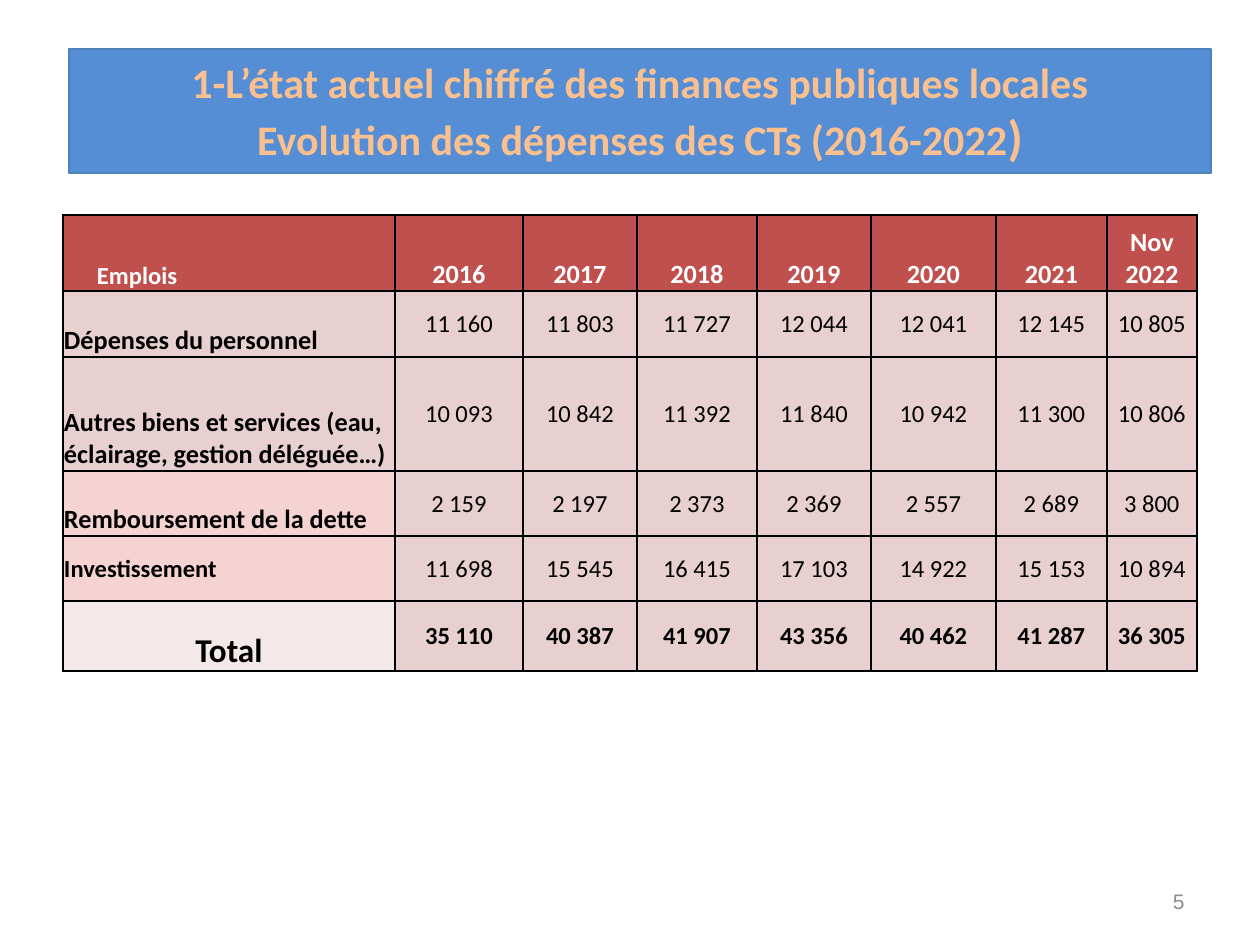
from dataclasses import dataclass

from lxml.etree import SubElement
from pptx import Presentation
from pptx.dml.color import RGBColor
from pptx.enum.shapes import MSO_SHAPE
from pptx.enum.text import MSO_ANCHOR, PP_ALIGN
from pptx.oxml.ns import qn
from pptx.util import Emu, Pt


@dataclass(frozen=True)
class Theme:
    font: str = "Calibri"
    number_font: str = "Arial"
    banner: str = "558ED5"
    banner_line: str = "4F81BD"
    banner_text: str = "FAC090"
    header: str = "C0504D"
    body: str = "E8D0D0"
    accent: str = "F5D3D3"
    total: str = "F4E9E9"
    white: str = "FFFFFF"
    black: str = "000000"
    grey: str = "8C8C8C"
    title_size: int = 24
    bracket_size: int = 28
    total_size: int = 19
    label_size: int = 15
    value_size: int = 14
    page_size: int = 12


@dataclass(frozen=True)
class Box:
    left: int
    top: int
    width: int
    height: int


@dataclass(frozen=True)
class Style:
    size: int
    color: str
    bold: bool = False
    font: str = "Calibri"


@dataclass(frozen=True)
class CellLook:
    style: Style
    fill: str
    anchor: MSO_ANCHOR = MSO_ANCHOR.MIDDLE
    align: PP_ALIGN = PP_ALIGN.CENTER
    indent: int = 1


@dataclass(frozen=True)
class TableRow:
    height: int
    label: str
    label_look: CellLook
    values: tuple[str, ...]
    value_look: CellLook


THEME = Theme()
EMU_PER_PIXEL = 914400 / 126
BOTTOM, MIDDLE = MSO_ANCHOR.BOTTOM, MSO_ANCHOR.MIDDLE
LEFT, CENTER = PP_ALIGN.LEFT, PP_ALIGN.CENTER

TITLE_BOX = Box(69, 49, 1142, 124)
TABLE_BOX = Box(63, 215, 1134, 456)
PAGE_BOX = Box(903, 876, 294, 50)
COLUMN_WIDTHS = (332, 128, 114, 120, 114, 125, 111, 90)

HEADING = CellLook(Style(THEME.label_size, THEME.white, True), THEME.header, BOTTOM)
HEADING_LABEL = CellLook(
    Style(THEME.value_size, THEME.white, True), THEME.header, BOTTOM, LEFT, 34
)
VALUE = CellLook(Style(THEME.value_size, THEME.black), THEME.body)
TOTAL_VALUE = CellLook(Style(THEME.value_size, THEME.black, True), THEME.body)
LABEL_STYLE = Style(THEME.label_size, THEME.black, True)
LABEL = CellLook(LABEL_STYLE, THEME.body, BOTTOM, LEFT)
DEBT_LABEL = CellLook(LABEL_STYLE, THEME.accent, BOTTOM, LEFT)
INVESTMENT_LABEL = CellLook(
    Style(THEME.value_size, THEME.black, True), THEME.accent, MIDDLE, LEFT
)
TOTAL_LABEL = CellLook(Style(THEME.total_size, THEME.black, True), THEME.total, BOTTOM)

ROWS = (
    TableRow(76, "Emplois", HEADING_LABEL,
             ("2016", "2017", "2018", "2019", "2020", "2021", "Nov 2022"), HEADING),
    TableRow(66, "Dépenses du personnel", LABEL,
             ("11 160", "11 803", "11 727", "12 044", "12 041", "12 145", "10 805"), VALUE),
    TableRow(114, "Autres biens et services (eau, éclairage, gestion déléguée…)", LABEL,
             ("10 093", "10 842", "11 392", "11 840", "10 942", "11 300", "10 806"), VALUE),
    TableRow(65, "Remboursement de la dette", DEBT_LABEL,
             ("2 159", "2 197", "2 373", "2 369", "2 557", "2 689", "3 800"), VALUE),
    TableRow(65, "Investissement", INVESTMENT_LABEL,
             ("11 698", "15 545", "16 415", "17 103", "14 922", "15 153", "10 894"), VALUE),
    TableRow(70, "Total", TOTAL_LABEL,
             ("35 110", "40 387", "41 907", "43 356", "40 462", "41 287", "36 305"), TOTAL_VALUE),
)


def px(length: int) -> Emu:
    return Emu(round(length * EMU_PER_PIXEL))


def frame_of(box: Box) -> tuple[Emu, Emu, Emu, Emu]:
    return px(box.left), px(box.top), px(box.width), px(box.height)


def color_of(code: str) -> RGBColor:
    return RGBColor.from_string(code)


def add_span(para, text: str, style: Style) -> None:
    span = para.add_run()
    span.text = text
    span.font.name = style.font
    span.font.size = Pt(style.size)
    span.font.bold = style.bold
    span.font.color.rgb = color_of(style.color)


def add_title(page) -> None:
    banner = page.shapes.add_shape(MSO_SHAPE.RECTANGLE, *frame_of(TITLE_BOX))
    banner.shadow.inherit = False
    banner.fill.solid()
    banner.fill.fore_color.rgb = color_of(THEME.banner)
    banner.line.color.rgb = color_of(THEME.banner_line)
    banner.line.width = Pt(0.75)
    banner.text_frame.word_wrap = True
    banner.text_frame.vertical_anchor = MIDDLE
    para = banner.text_frame.paragraphs[0]
    para.alignment = CENTER
    style = Style(THEME.title_size, THEME.banner_text, True)
    add_span(para, "1-L’état actuel chiffré des finances publiques locales", style)
    para.add_line_break()
    add_span(para, "Evolution des dépenses des CTs (2016-2022", style)
    add_span(para, ")", Style(THEME.bracket_size, THEME.banner_text, True))


def add_borders(cell) -> None:
    properties = cell._tc.get_or_add_tcPr()
    for position, side in enumerate(("a:lnL", "a:lnR", "a:lnT", "a:lnB")):
        line = SubElement(properties, qn(side), w=str(Pt(1)))
        fill = SubElement(line, qn("a:solidFill"))
        SubElement(fill, qn("a:srgbClr"), val=THEME.black)
        properties.insert(position, line)


def fill_cell(cell, text: str, look: CellLook) -> None:
    cell.fill.solid()
    cell.fill.fore_color.rgb = color_of(look.fill)
    cell.vertical_anchor = look.anchor
    cell.margin_left = px(look.indent)
    cell.margin_right = cell.margin_top = px(1)
    cell.margin_bottom = 0
    para = cell.text_frame.paragraphs[0]
    para.alignment = look.align
    add_span(para, text, look.style)
    add_borders(cell)


def add_spending_table(page) -> None:
    table = page.shapes.add_table(
        len(ROWS), len(COLUMN_WIDTHS), *frame_of(TABLE_BOX)
    ).table
    table.horz_banding = False
    for column, width in zip(table.columns, COLUMN_WIDTHS):
        column.width = px(width)
    for table_row, row in zip(table.rows, ROWS):
        table_row.height = px(row.height)
        label_cell, *value_cells = table_row.cells
        fill_cell(label_cell, row.label, row.label_look)
        for cell, value in zip(value_cells, row.values):
            fill_cell(cell, value, row.value_look)


def add_page_number(page) -> None:
    box = page.shapes.add_textbox(*frame_of(PAGE_BOX))
    box.text_frame.word_wrap = True
    box.text_frame.vertical_anchor = MIDDLE
    para = box.text_frame.paragraphs[0]
    para.alignment = PP_ALIGN.RIGHT
    add_span(para, "5", Style(THEME.page_size, THEME.grey, font=THEME.number_font))


def main() -> None:
    deck = Presentation()
    deck.slide_width, deck.slide_height = px(1260), px(945)
    page = deck.slides.add_slide(deck.slide_layouts[6])
    add_title(page)
    add_spending_table(page)
    add_page_number(page)
    deck.save("out.pptx")


if __name__ == "__main__":
    main()
